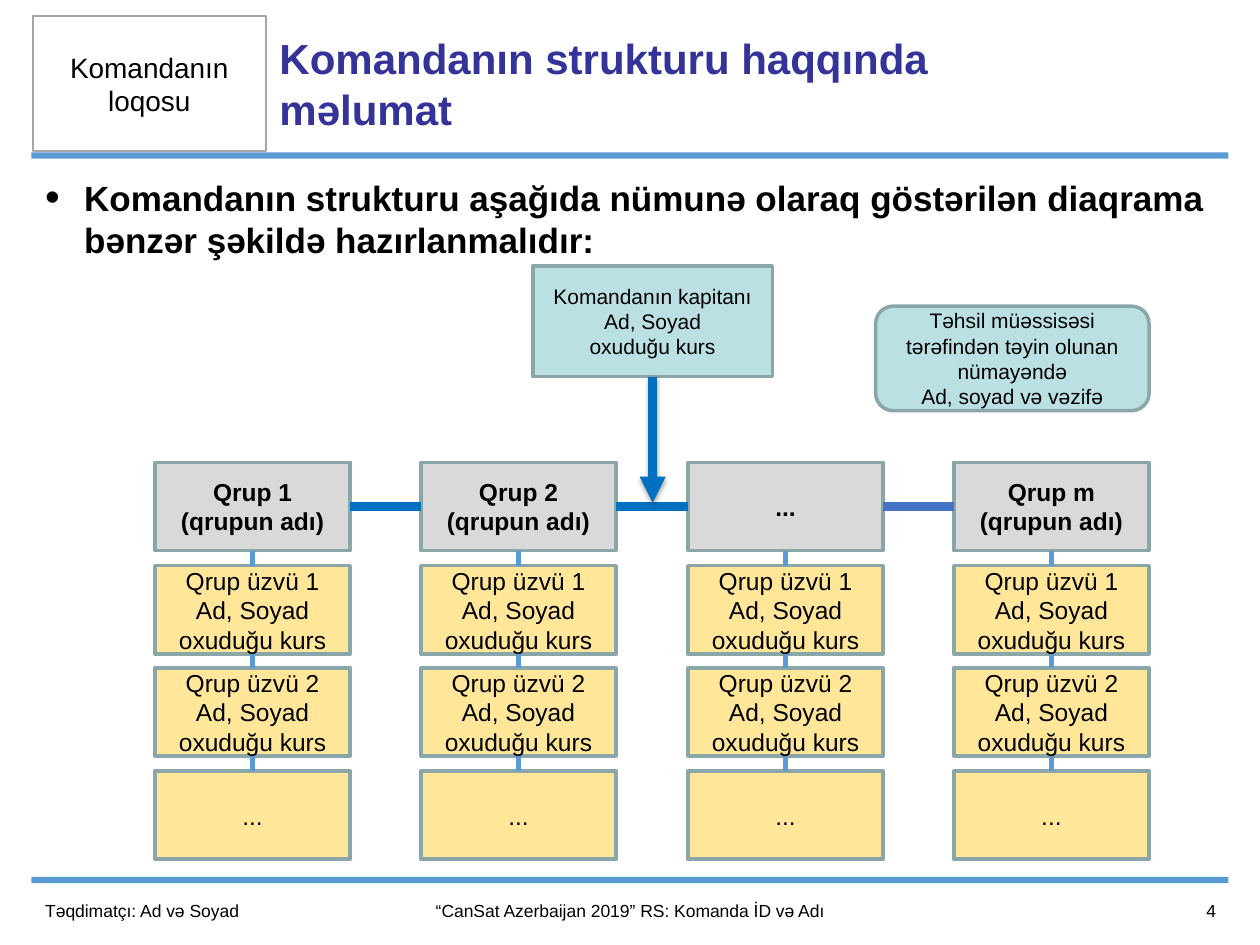
from itertools import pairwise

from lxml.etree import SubElement
from pptx import Presentation
from pptx.dml.color import RGBColor
from pptx.enum.shapes import MSO_CONNECTOR, MSO_SHAPE as SHAPE
from pptx.enum.text import MSO_ANCHOR as ANCHOR, PP_ALIGN as ALIGN
from pptx.oxml.ns import qn
from pptx.util import Emu, Pt

PX = 9144  # 100 px to the inch
BLACK = RGBColor(0x00, 0x00, 0x00)
WHITE = RGBColor(0xFF, 0xFF, 0xFF)
NAVY = RGBColor(0x33, 0x33, 0x99)
SKY = RGBColor(0x5B, 0x9B, 0xD5)
BLUE = RGBColor(0x00, 0x70, 0xC0)
INDIGO = RGBColor(0x44, 0x72, 0xC4)
SILVER = RGBColor(0xA5, 0xA5, 0xA5)
EDGE = RGBColor(0x8A, 0xA6, 0xA8)
TEAL = RGBColor(0xBB, 0xE0, 0xE3)
GREY = RGBColor(0xD9, 0xD9, 0xD9)
YELLOW = RGBColor(0xFF, 0xE6, 0x99)


def px(n):
    return Emu(n * PX)


class Painter:
    font = "Arial"

    def __init__(self, slide):
        self.slide = slide

    def set_text(self, tf, text, size, color=BLACK, bold=False, align=ALIGN.CENTER,
                 anchor=ANCHOR.MIDDLE):
        tf.word_wrap = True
        tf.vertical_anchor = anchor
        tf.text = text
        for p in tf.paragraphs:
            p.alignment = align
            for r in p.runs:
                r.font.name, r.font.size, r.font.bold = self.font, Pt(size), bold
                r.font.color.rgb = color

    def text(self, x, y, w, h, text, size, **style):
        tb = self.slide.shapes.add_textbox(px(x), px(y), px(w), px(h))
        self.set_text(tb.text_frame, text, size, **style)
        return tb

    def bullet(self, x, y, w, h, text, size):
        tb = self.text(x, y, w, h, text, size, bold=True, align=ALIGN.LEFT, anchor=ANCHOR.TOP)
        pPr = tb.text_frame.paragraphs[0]._p.get_or_add_pPr()
        pPr.set("marL", str(px(31)))
        pPr.set("indent", str(px(-31)))
        SubElement(pPr, qn("a:buSzPct"), val="120000")
        SubElement(pPr, qn("a:buFont"), typeface=self.font)
        SubElement(pPr, qn("a:buChar"), char="•")

    def box(self, x, y, w, h, fill, text="", size=14, bold=False, line=EDGE, weight=2,
            kind=SHAPE.RECTANGLE):
        sp = self.slide.shapes.add_shape(kind, px(x), px(y), px(w), px(h))
        sp.shadow.inherit = False
        sp.fill.solid()
        sp.fill.fore_color.rgb = fill
        if line is None:
            sp.line.fill.background()
        else:
            sp.line.color.rgb = line
            sp.line.width = Pt(weight)
        if text:
            self.set_text(sp.text_frame, text, size, bold=bold)
        return sp

    def connector(self, start, site, color, weight, end=None, end_site=0, point=(0, 0)):
        """Line from a side of start to a side of end, or to a free point."""
        c = self.slide.shapes.add_connector(MSO_CONNECTOR.STRAIGHT, 0, 0,
                                            px(point[0]), px(point[1]))
        c.begin_connect(start, site)
        if end is not None:
            c.end_connect(end, end_site)
        c.line.color.rgb = color
        c.line.width = Pt(weight)
        SubElement(c._element.spPr, qn("a:effectLst"))
        return c

    def arrow(self, start, site, point, color, weight):
        spPr = self.connector(start, site, color, weight, point=point)._element.spPr
        SubElement(spPr.find(qn("a:ln")), qn("a:tailEnd"), type="triangle")
        shadow = SubElement(spPr.find(qn("a:effectLst")), qn("a:outerShdw"),
                            blurRad=str(Pt(3.1)), dist=str(Pt(1.6)), dir="5400000",
                            rotWithShape="0")
        tint = SubElement(shadow, qn("a:srgbClr"), val=str(BLACK))
        SubElement(tint, qn("a:alpha"), val="38000")


def draw_frame(s):
    for y in (121, 696):
        s.box(25, y, 950, 5, SKY, line=None)
    s.box(26, 13, 185, 107, WHITE, "Komandanın loqosu", 16, line=SILVER, weight=1)
    s.text(212, 13, 600, 106, "Komandanın strukturu haqqında məlumat", 24,
           color=NAVY, bold=True, align=ALIGN.LEFT)
    s.bullet(26, 135, 949, 77, "Komandanın strukturu aşağıda nümunə olaraq göstərilən "
             "diaqrama bənzər şəkildə hazırlanmalıdır:", 20)
    for x, w, text, align in (
        (26, 239, "Təqdimatçı: Ad və Soyad", ALIGN.LEFT),
        (265, 470, "“CanSat Azerbaijan 2019” RS: Komanda İD və Adı", ALIGN.CENTER),
        (875, 100, "4", ALIGN.RIGHT),
    ):
        s.text(x, 703, w, 40, text, 10, align=align)


def draw_chart(s):
    captain = s.box(423, 211, 190, 88, TEAL, "Komandanın kapitanı\nAd, Soyad\noxuduğu kurs", 12)
    s.box(695, 243, 217, 83, TEAL, "Təhsil müəssisəsi tərəfindən təyin olunan nümayəndə\n"
          "Ad, soyad və vəzifə", 12, kind=SHAPE.ROUNDED_RECTANGLE)

    groups = ["Qrup 1\n(qrupun adı)", "Qrup 2\n(qrupun adı)", "...", "Qrup m\n(qrupun adı)"]
    members = [f"Qrup üzvü {n}\nAd, Soyad\noxuduğu kurs" for n in (1, 2)] + ["..."]
    heads = []
    for col, group in enumerate(groups):
        x = 123 + round(col * 634 / 3)
        column = [s.box(x, 367, 155, 70, GREY, group, bold=True)]
        for row, member in enumerate(members, 1):
            column.append(s.box(x, 367 + round(row * 245 / 3), 155, 70, YELLOW, member))
        for upper, lower in pairwise(column):
            s.connector(upper, 2, SKY, 3, lower, 0)
        heads.append(column[0])
    for (left, right), color in zip(pairwise(heads), (BLUE, BLUE, INDIGO)):
        s.connector(left, 3, color, 5, right, 1)
    s.arrow(captain, 2, (518, 399), BLUE, 5)


def main():
    prs = Presentation()
    prs.slide_width, prs.slide_height = px(1000), px(750)
    s = Painter(prs.slides.add_slide(prs.slide_layouts[6]))
    draw_frame(s)
    draw_chart(s)
    prs.save("out.pptx")


if __name__ == "__main__":
    main()
